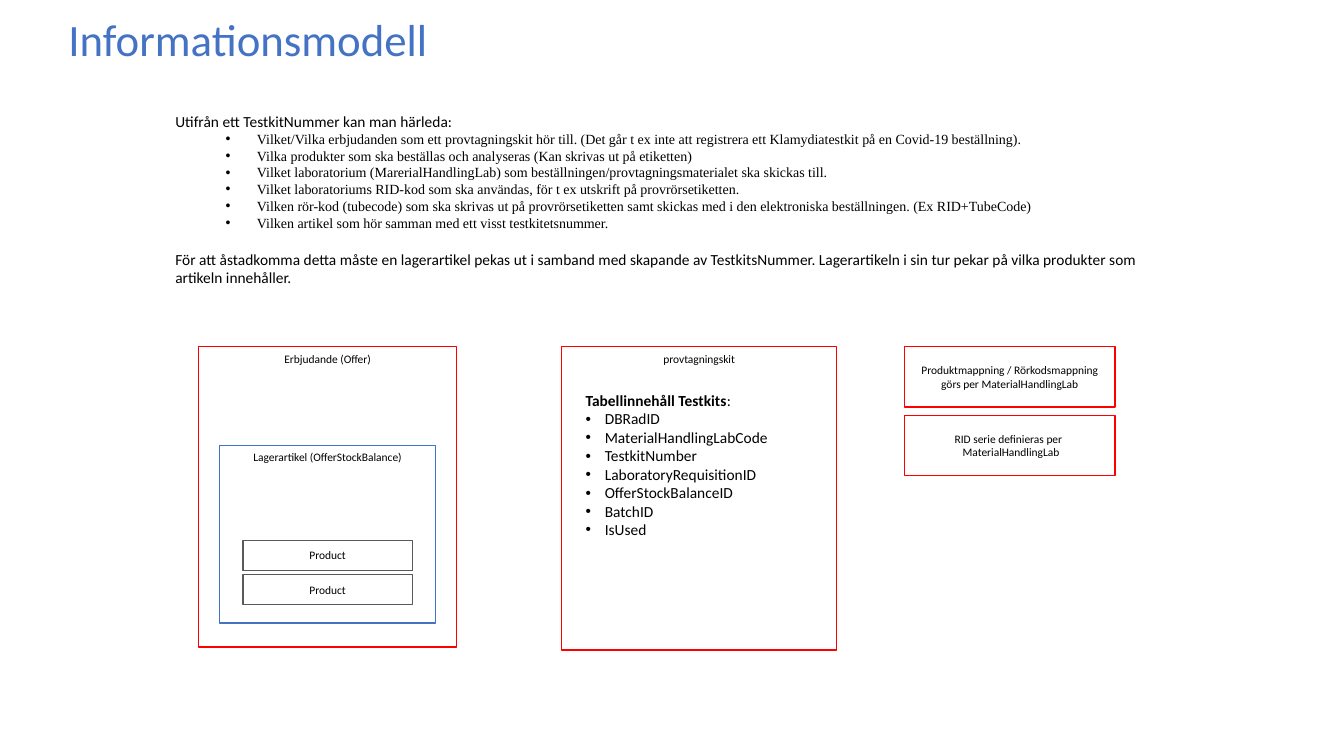
from collections import namedtuple
from dataclasses import dataclass

from lxml.etree import SubElement
from pptx import Presentation
from pptx.dml.color import RGBColor as Rgb
from pptx.enum.shapes import MSO_SHAPE as Shape
from pptx.enum.text import MSO_ANCHOR as Anchor, PP_ALIGN as Align
from pptx.oxml.ns import qn
from pptx.util import Inches, Pt


@dataclass(frozen=True)
class Theme:
    black: str = "000000"
    red: str = "FF0000"
    blue: str = "4472C4"
    grey: str = "595959"
    sans: str = "Calibri"
    serif: str = "Times New Roman"
    title: float = 32
    body: float = 11
    detail: float = 10
    label: float = 8.2


THEME = Theme()
Box = namedtuple("Box", "left top width height")

DERIVED_FACTS = [
    "Vilket/Vilka erbjudanden som ett provtagningskit hör till. (Det går t ex inte att registrera ett Klamydiatestkit på en Covid-19 beställning).",
    "Vilka produkter som ska beställas och analyseras (Kan skrivas ut på etiketten)",
    "Vilket laboratorium (MarerialHandlingLab) som beställningen/provtagningsmaterialet ska skickas till.",
    "Vilket laboratoriums RID-kod som ska användas, för t ex utskrift på provrörsetiketten.",
    "Vilken rör-kod (tubecode) som ska skrivas ut på provrörsetiketten samt skickas med i den elektroniska beställningen. (Ex RID+TubeCode)",
    "Vilken artikel som hör samman med ett visst testkitetsnummer.",
]
CONCLUSION = (
    "För att åstadkomma detta måste en lagerartikel pekas ut i samband med skapande av "
    "TestkitsNummer. Lagerartikeln i sin tur pekar på vilka produkter som artikeln innehåller."
)
TESTKIT_FIELDS = [
    "DBRadID", "MaterialHandlingLabCode", "TestkitNumber", "LaboratoryRequisitionID",
    "OfferStockBalanceID", "BatchID", "IsUsed",
]


def add_bullet(paragraph, indent, hanging, tab=None):
    properties = paragraph._p.get_or_add_pPr()
    properties.set("marL", str(Inches(indent)))
    properties.set("indent", str(-Inches(hanging)))
    SubElement(properties, qn("a:buFont"), typeface="Arial")
    SubElement(properties, qn("a:buChar"), char="•")
    if tab is not None:
        tabs = SubElement(properties, qn("a:tabLst"))
        SubElement(tabs, qn("a:tab"), pos=str(Inches(tab)), algn="l")


def write(frame, text, size=THEME.body, font=THEME.sans, color=THEME.black, bold=False,
          align=Align.LEFT, before=0, spacing=None, level=0, bullet=None, tail=""):
    first = frame.paragraphs[0]
    paragraph = frame.add_paragraph() if first.runs else first
    paragraph.alignment = align
    paragraph.level = level
    if before:
        paragraph.space_before = Pt(before)
    if spacing:
        paragraph.line_spacing = spacing
    if bullet:
        add_bullet(paragraph, *bullet)
    for words, weight in ((text, bold), (tail, False)):
        if words:
            run = paragraph.add_run()
            run.text = words
            run.font.size = Pt(size)
            run.font.name = font
            run.font.bold = weight
            run.font.color.rgb = Rgb.from_string(color)


def add_frame(slide, box, anchor=Anchor.TOP):
    frame = slide.shapes.add_textbox(*map(Inches, box)).text_frame
    frame.word_wrap = True
    frame.vertical_anchor = anchor
    return frame


def add_entity(slide, box, *lines, outline=THEME.red, anchor=Anchor.MIDDLE):
    entity = slide.shapes.add_shape(Shape.RECTANGLE, *map(Inches, box))
    entity.shadow.inherit = False
    entity.fill.background()
    entity.line.color.rgb = Rgb.from_string(outline)
    entity.line.width = Pt(1)
    entity.text_frame.word_wrap = True
    entity.text_frame.vertical_anchor = anchor
    for line in lines:
        write(entity.text_frame, line, size=THEME.label, align=Align.CENTER)


def add_heading(slide, box):
    frame = add_frame(slide, box, Anchor.MIDDLE)
    write(frame, "Informationsmodell", size=THEME.title, color=THEME.blue, spacing=0.9)


def add_introduction(slide, box):
    frame = add_frame(slide, box)
    write(frame, "Utifrån ett TestkitNummer kan man härleda:")
    for fact in DERIVED_FACTS:
        write(frame, fact, size=THEME.detail, font=THEME.serif, level=1, bullet=(0.81, 0.31, 0.47))
    write(frame, CONCLUSION, before=13.4)


def add_offer(slide, box):
    add_entity(slide, box, "Erbjudande (Offer)", anchor=Anchor.TOP)
    stock = Box(box.left + 0.21, box.top + 0.98, 2.14, 1.76)
    add_entity(slide, stock, "Lagerartikel (OfferStockBalance)", outline=THEME.blue, anchor=Anchor.TOP)
    for row in range(2):
        product = Box(stock.left + 0.23, stock.top + 0.94 + row * 0.34, 1.68, 0.3)
        add_entity(slide, product, "Product", outline=THEME.grey)


def add_testkit(slide, box):
    frame = add_frame(slide, Box(box.left + 0.14, box.top + 0.39, 2.45, 1.95))
    write(frame, "Tabellinnehåll Testkits", bold=True, tail=":")
    for field in TESTKIT_FIELDS:
        write(frame, field, bullet=(0.19, 0.19))
    add_entity(slide, box, "provtagningskit", anchor=Anchor.TOP)


def add_lab_rules(slide, box):
    rules = [
        ["Produktmappning / Rörkodsmappning görs per MaterialHandlingLab"],
        ["RID serie definieras per ", " MaterialHandlingLab"],
    ]
    height = 0.6
    step = box.height - height
    for row, lines in enumerate(rules):
        add_entity(slide, Box(box.left, box.top + row * step, box.width, height), *lines)


def main():
    deck = Presentation()
    deck.slide_width, deck.slide_height = Inches(13.33), Inches(7.5)
    slide = deck.slides.add_slide(deck.slide_layouts[6])
    add_heading(slide, Box(0.58, 0.12, 11.02, 0.59))
    add_introduction(slide, Box(1.64, 1.06, 9.95, 1.85))
    add_offer(slide, Box(1.97, 3.44, 2.56, 2.98))
    add_testkit(slide, Box(5.57, 3.44, 2.73, 3.01))
    add_lab_rules(slide, Box(8.97, 3.44, 2.09, 1.28))
    deck.save("out.pptx")


if __name__ == "__main__":
    main()
